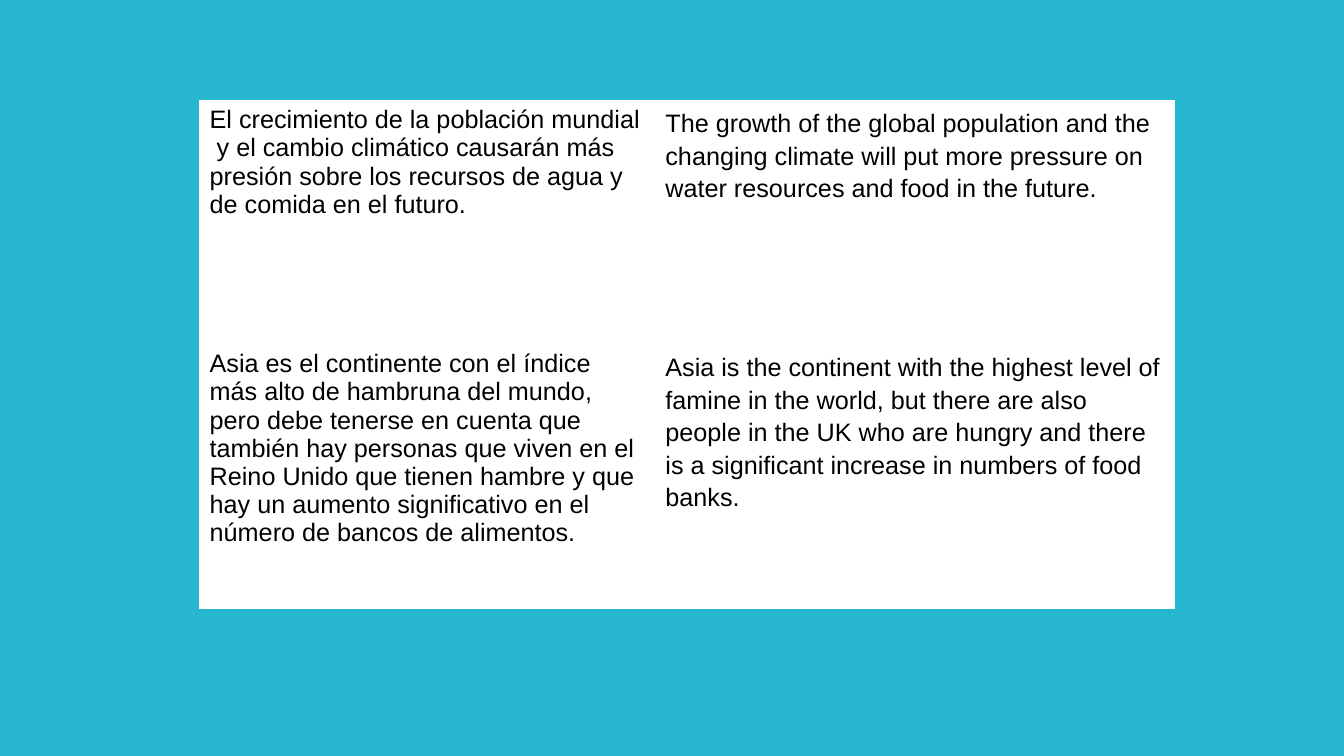
"""Build a slide with a bilingual table about population, climate and hunger."""
from dataclasses import dataclass

from pptx import Presentation
from pptx import util as u
from pptx.dml.color import RGBColor
from pptx.table import _Cell

BACKGROUND, PAPER, INK = "27B8CF", "FFFFFF", "000000"
COLUMN_WIDTHS = (4.52, 5.15)
LEFT, TOP = 1.98, 1.0
ENGLISH_SPACING = 1.15
FONT = {"name": "Arial", "size": u.Pt(18), "bold": False}
MARGINS = {
    "margin_left": u.Inches(0.1),
    "margin_right": u.Inches(0.1),
    "margin_top": u.Inches(0.05),
    "margin_bottom": u.Inches(0.05),
}


@dataclass(frozen=True)
class Translation:
    spanish: str
    english: str
    height: float


TRANSLATIONS = (
    Translation(
        "El crecimiento de la población mundial  y el cambio climático causarán más "
        "presión sobre los recursos de agua y de comida en el futuro.",
        "The growth of the global population and the changing climate will put more "
        "pressure on water resources and food in the future.",
        2.42,
    ),
    Translation(
        "Asia es el continente con el índice más alto de hambruna del mundo, pero debe "
        "tenerse en cuenta que también hay personas que viven en el Reino Unido que "
        "tienen hambre y que hay un aumento significativo en el número de bancos de "
        "alimentos.",
        "Asia is the continent with the highest level of famine in the world, but there "
        "are also people in the UK who are hungry and there is a significant increase in "
        "numbers of food banks.",
        2.62,
    ),
)


def paint(target, color: str) -> None:
    target.solid()
    target.fore_color.rgb = RGBColor.from_string(color)


def apply_format(target, values: dict) -> None:
    for key, value in values.items():
        setattr(target, key, value)


def write_cell(cell: _Cell, wording: str, spacing: float | None) -> None:
    paint(cell.fill, PAPER)
    apply_format(cell, MARGINS)
    sentence = cell.text_frame.paragraphs[0]
    sentence.line_spacing = spacing
    run = sentence.add_run()
    run.text = wording
    apply_format(run.font, FONT)
    paint(run.font.fill, INK)


def add_translations(slide) -> None:
    total_height = sum(entry.height for entry in TRANSLATIONS)
    glossary = slide.shapes.add_table(
        len(TRANSLATIONS), len(COLUMN_WIDTHS), u.Inches(LEFT), u.Inches(TOP),
        u.Inches(sum(COLUMN_WIDTHS)), u.Inches(total_height),
    ).table
    apply_format(glossary, {"first_row": False, "horz_banding": False})
    for column, width in zip(glossary.columns, COLUMN_WIDTHS):
        column.width = u.Inches(width)
    for row, entry in zip(glossary.rows, TRANSLATIONS):
        row.height = u.Inches(entry.height)
        write_cell(row.cells[0], entry.spanish, None)
        write_cell(row.cells[1], entry.english, ENGLISH_SPACING)


def main() -> None:
    deck = Presentation()
    deck.slide_width, deck.slide_height = u.Inches(13.33), u.Inches(7.5)
    slide = deck.slides.add_slide(deck.slide_layouts[6])
    paint(slide.background.fill, BACKGROUND)
    add_translations(slide)
    deck.save("out.pptx")


if __name__ == "__main__":
    main()
